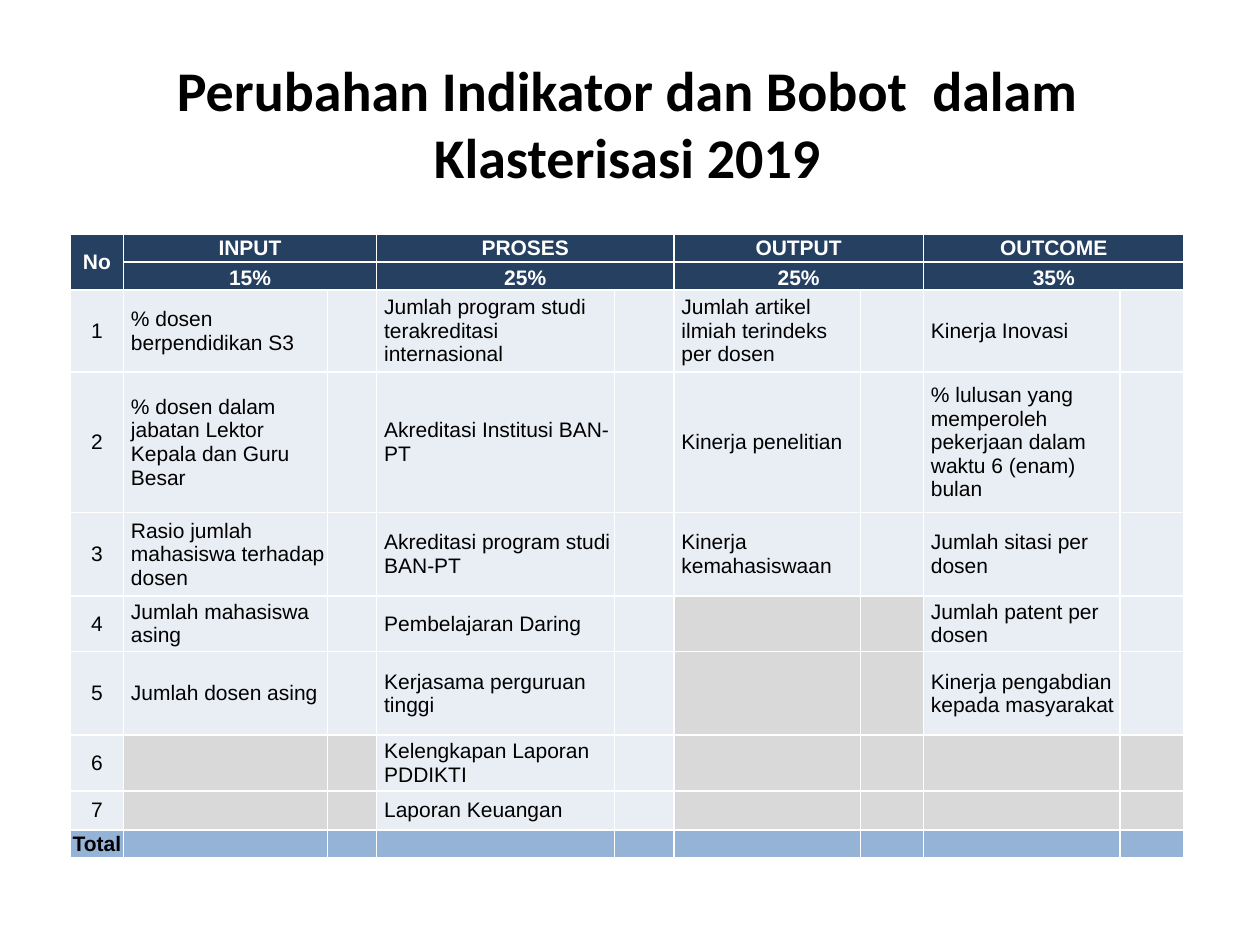
import pptx
import pptx.dml.color
import pptx.enum.text
import pptx.oxml.ns
import pptx.util
from lxml import etree

Inches = pptx.util.Inches
Pt = pptx.util.Pt
RGBColor = pptx.dml.color.RGBColor
ALIGN = pptx.enum.text.PP_ALIGN
ANCHOR = pptx.enum.text.MSO_ANCHOR
qn = pptx.oxml.ns.qn

BLACK = RGBColor(0x00, 0x00, 0x00)
WHITE = RGBColor(0xFF, 0xFF, 0xFF)
NAVY = RGBColor(0x25, 0x40, 0x61)
PALE = RGBColor(0xE9, 0xED, 0xF4)
GREY = RGBColor(0xD9, 0xD9, 0xD9)
BLUE = RGBColor(0x95, 0xB3, 0xD7)

TITLE = "Perubahan Indikator dan Bobot  dalam Klasterisasi 2019"
GROUPS = [
    ("INPUT", "15%", [
        "% dosen berpendidikan S3",
        "% dosen dalam jabatan Lektor Kepala dan Guru Besar",
        "Rasio jumlah mahasiswa terhadap dosen",
        "Jumlah mahasiswa asing",
        "Jumlah dosen asing"]),
    ("PROSES", "25%", [
        "Jumlah program studi terakreditasi internasional",
        "Akreditasi Institusi BAN-PT",
        "Akreditasi program studi BAN-PT",
        "Pembelajaran Daring",
        "Kerjasama perguruan tinggi",
        "Kelengkapan Laporan PDDIKTI",
        "Laporan Keuangan"]),
    ("OUTPUT", "25%", [
        "Jumlah artikel ilmiah terindeks per dosen",
        "Kinerja penelitian",
        "Kinerja kemahasiswaan"]),
    ("OUTCOME", "35%", [
        "Kinerja Inovasi",
        "% lulusan yang memperoleh pekerjaan dalam waktu 6 (enam) bulan",
        "Jumlah sitasi per dosen",
        "Jumlah patent per dosen",
        "Kinerja pengabdian kepada masyarakat"]),
]
COL_WIDTHS = [0.42, 1.62, 0.39, 1.89, 0.47, 1.48, 0.5, 1.56, 0.51]
ROW_HEIGHTS = [0.22, 0.22, 0.65, 1.11, 0.66, 0.44, 0.66, 0.44, 0.31, 0.22]
HEAD_ROWS = 2
ITEM_ROWS = len(ROW_HEIGHTS) - HEAD_ROWS - 1


def add_run(p, text, font, size, color, bold):
    r = p.add_run()
    r.text = text
    r.font.name = font
    r.font.size = Pt(size)
    r.font.color.rgb = color
    r.font.bold = bold


def add_title(slide, left, top, width, height):
    tf = slide.shapes.add_textbox(left, top, width, height).text_frame
    tf.word_wrap = True
    tf.vertical_anchor = ANCHOR.MIDDLE
    p = tf.paragraphs[0]
    p.alignment = ALIGN.CENTER
    add_run(p, TITLE, "Calibri", 32, BLACK, True)


def set_borders(cell):
    tc_pr = cell._tc.get_or_add_tcPr()
    for i, side in enumerate(("a:lnL", "a:lnR", "a:lnT", "a:lnB")):
        ln = etree.Element(qn(side), w=str(Pt(1)))
        fill = etree.SubElement(ln, qn("a:solidFill"))
        etree.SubElement(fill, qn("a:srgbClr"), val=str(WHITE))
        tc_pr.insert(i, ln)


def style_cell(cell, fill):
    """Fill and frame a cell; small end marks keep empty rows from growing."""
    cell.margin_left = cell.margin_right = 0
    cell.margin_top = cell.margin_bottom = 0
    cell.vertical_anchor = ANCHOR.MIDDLE
    cell.fill.solid()
    cell.fill.fore_color.rgb = fill
    set_borders(cell)
    p = cell.text_frame.paragraphs[0]
    etree.SubElement(p._p, qn("a:endParaRPr"), sz="1200")


def write_cell(cell, text, color=BLACK, bold=False, centered=True):
    p = cell.text_frame.paragraphs[0]
    if centered:
        p.alignment = ALIGN.CENTER
    else:
        p._p.get_or_add_pPr().set("marL", str(Inches(0.06)))
    add_run(p, text, "Arial", 12, color, bold)


def cell_fill(row, col):
    if row < HEAD_ROWS:
        return NAVY
    if row == HEAD_ROWS + ITEM_ROWS:
        return BLUE
    if col == 0:
        return PALE
    items = GROUPS[(col - 1) // 2][2]
    return PALE if row - HEAD_ROWS < len(items) else GREY


def write_group(table, col, name, weight, items):
    for row, text in enumerate((name, weight)):
        table.cell(row, col).merge(table.cell(row, col + 1))
        write_cell(table.cell(row, col), text, WHITE, True)
    table.cell(1, col).vertical_anchor = ANCHOR.BOTTOM
    for row, text in enumerate(items, HEAD_ROWS):
        write_cell(table.cell(row, col), text, centered=False)


def add_indicator_table(slide, left, top, width, height):
    table = slide.shapes.add_table(
        len(ROW_HEIGHTS), len(COL_WIDTHS), left, top, width, height).table
    for column, share in zip(table.columns, COL_WIDTHS):
        column.width = int(width * share / sum(COL_WIDTHS))
    for row, share in zip(table.rows, ROW_HEIGHTS):
        row.height = int(height * share / sum(ROW_HEIGHTS))
    for row in range(len(ROW_HEIGHTS)):
        for col in range(len(COL_WIDTHS)):
            style_cell(table.cell(row, col), cell_fill(row, col))

    table.cell(0, 0).merge(table.cell(HEAD_ROWS - 1, 0))
    write_cell(table.cell(0, 0), "No", WHITE, True)
    for number in range(1, ITEM_ROWS + 1):
        write_cell(table.cell(HEAD_ROWS + number - 1, 0), str(number))
    write_cell(table.cell(HEAD_ROWS + ITEM_ROWS, 0), "Total", bold=True)
    for i, group in enumerate(GROUPS):
        write_group(table, 1 + 2 * i, *group)


def main():
    prs = pptx.Presentation()
    prs.slide_width = Inches(10)
    prs.slide_height = Inches(7.5)
    slide = prs.slides.add_slide(prs.slide_layouts[6])
    add_title(slide, Inches(0.67), Inches(0.25), Inches(8.62), Inches(1.45))
    add_indicator_table(slide, Inches(0.56), Inches(1.86),
                        Inches(8.84), Inches(4.95))
    prs.save("out.pptx")


if __name__ == "__main__":
    main()
